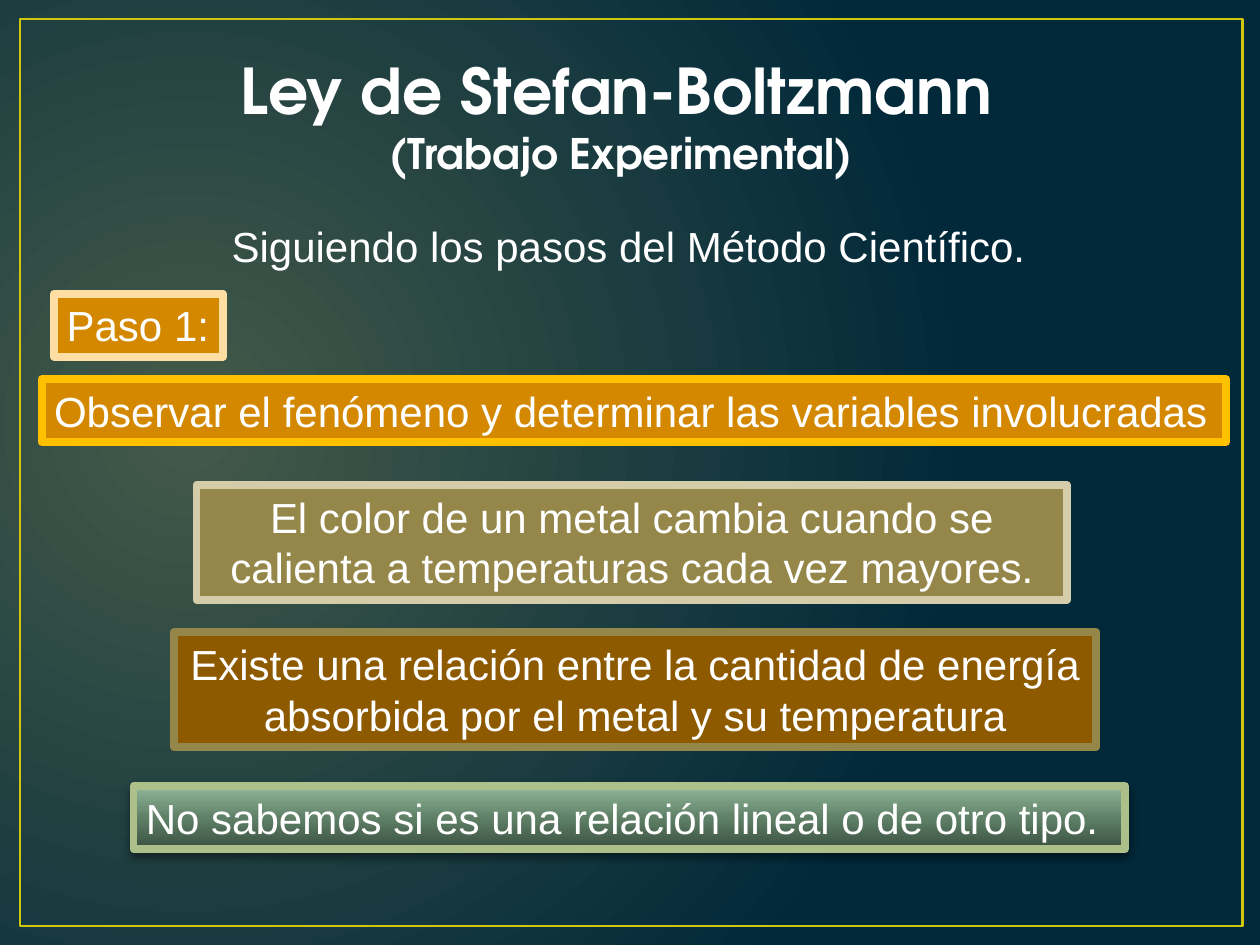
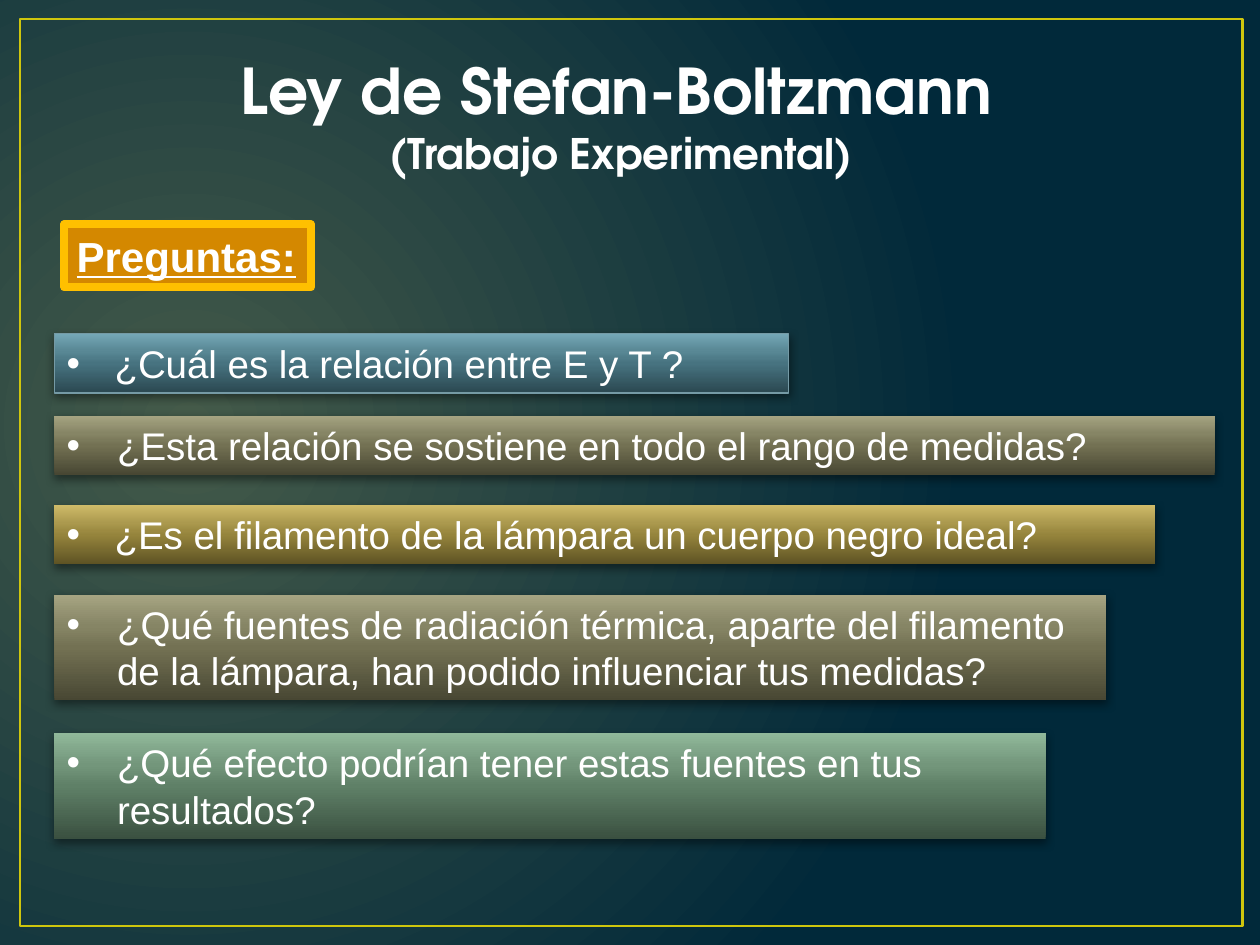
from pptx import Presentation
from pptx.dml.color import RGBColor
from pptx.enum.shapes import MSO_SHAPE
from pptx.enum.text import MSO_ANCHOR, MSO_AUTO_SIZE, PP_ALIGN
from pptx.oxml import parse_xml
from pptx.oxml.ns import nsdecls, qn
from pptx.util import Pt

RECT = MSO_SHAPE.RECTANGLE
TOP = MSO_ANCHOR.TOP
GROW = MSO_AUTO_SIZE.SHAPE_TO_FIT_TEXT
LEFT, MID = PP_ALIGN.LEFT, PP_ALIGN.CENTER

# Shared look
HEAD, BODY = "TeX Gyre Adventor", "Arial"
WHITE, BLACK = "FFFFFF", "000000"
FRAME, AMBER, GOLD = "CFC60D", "D48800", "FFC000"
CREAM, KHAKI, SAND, BROWN, LIME = "FFDEA4", "958749", "D5CDA9", "8E5A00", "AEC089"
STEEL = "759AA5"
BACK = [(0, "445A49"), (100, "01293A")]
STEPS = (0, 50, 70, 100)
GREEN = list(zip(STEPS, ("3A5040", "5F8067", "73967B", "90B89A")))
BLUE = list(zip(STEPS, ("2B4851", "477380", "588794", "74A7B6")))
OLIVE = list(zip(STEPS, ("484733", "737153", "868565", "A6A482")))
OCHRE = list(zip(STEPS, ("5E5324", "95843C", "AB994E", "CFBB69")))
UPWARD = '<a:lin ang="16200000" scaled="0"/>'
GLOW = ('<a:path path="circle"><a:fillToRect l="15000" t="50000" '
        'r="85000" b="60000"/></a:path>')
MARGIN = 31
ROW, TALL = 33.8, 60.5


def tint(code):
    return RGBColor.from_string(code)


def blend(fill, root, stops, course):
    """Swap the first fill under root for a gradient."""
    fill.background()
    marks = "".join(f'<a:gs pos="{pos * 1000}"><a:srgbClr val="{code}"/></a:gs>'
                    for pos, code in stops)
    old = root.find(".//" + qn("a:noFill"))
    old.getparent().replace(old, parse_xml(
        f'<a:gradFill {nsdecls("a")} rotWithShape="1"><a:gsLst>{marks}</a:gsLst>'
        f'{course}</a:gradFill>'))


def shade(shape):
    """Soft shadow just below the shape."""
    shape.element.spPr.find(qn("a:effectLst")).append(parse_xml(
        f'<a:outerShdw {nsdecls("a")} blurRad="{Pt(5)}" dist="{Pt(2)}" '
        f'dir="5400000" rotWithShape="0"><a:srgbClr val="{BLACK}">'
        '<a:alpha val="43000"/></a:srgbClr></a:outerShdw>'))


def style(para, size, align=LEFT, face=BODY, bold=False, under=False):
    para.alignment = align
    for run in para.runs:
        font = run.font
        font.name, font.size = face, Pt(size)
        font.bold, font.underline = bold, under
        font.color.rgb = tint(WHITE)


def write(shape, text, size=24, wrap=True, **look):
    frame = shape.text_frame
    frame.text = text
    frame.word_wrap = wrap
    frame.auto_size = GROW
    frame.vertical_anchor = TOP
    for para in frame.paragraphs:
        style(para, size, **look)


def block(slide, spot, fill=None, line=None, width=4.5):
    """Rectangle; a list of stops as fill gives a shaded gradient."""
    shape = slide.shapes.add_shape(RECT, *map(Pt, spot))
    shape.shadow.inherit = False
    if isinstance(fill, list):
        blend(shape.fill, shape.element, fill, UPWARD)
        shade(shape)
    elif fill:
        shape.fill.solid()
        shape.fill.fore_color.rgb = tint(fill)
    else:
        shape.fill.background()
    if line:
        shape.line.color.rgb = tint(line)
        shape.line.width = Pt(width)
    else:
        shape.line.fill.background()
    return shape


def bullet(shape, indent):
    props = shape.text_frame.paragraphs[0]._p.get_or_add_pPr()
    props.set("marL", str(Pt(indent)))
    props.set("indent", str(-Pt(indent)))
    props.append(parse_xml(f'<a:buFont {nsdecls("a")} typeface="{BODY}"/>'))
    props.append(parse_xml(f'<a:buChar {nsdecls("a")} char="•"/>'))


def dress(layout, slide):
    """Give the layout its background and frame."""
    blend(layout.background.fill, layout.element, BACK, GLOW)
    frame = block(slide, (11.5, 10.8, 698.4, 518.4), line=FRAME, width=1.5)
    frame.element.nvSpPr.cNvPr.set("id", "20")
    layout.element.cSld.spTree.append(frame.element)


def head(slide):
    title = slide.shapes.title
    title.left, title.top, title.width, title.height = map(
        Pt, (130.3, 25.9, 449.3, 79.9))
    write(title, "Ley de Stefan-Boltzmann\n(Trabajo Experimental)", 36,
          wrap=False, face=HEAD, bold=True)
    style(title.text_frame.paragraphs[1], 24, MID, HEAD, True)


def method(slide):
    head(slide)
    intro = slide.shapes.add_textbox(*map(Pt, (125.3, 122.4, 473, 36)))
    write(intro, "Siguiendo los pasos del Método Científico.", wrap=False)
    step = block(slide, (MARGIN, 167.8, 96.5, 36), AMBER, CREAM)
    write(step, "Paso 1:", wrap=False)

    # Task and findings
    notes = [
        ((23.8, 216.7, 676.8, 36), AMBER, GOLD, LEFT,
         "Observar el fenómeno y determinar las variables involucradas"),
        ((112.3, 277.2, 497.5, 65.5), KHAKI, SAND, MID,
         "El color de un metal cambia cuando se calienta a temperaturas "
         "cada vez mayores."),
        ((99.4, 361.4, 527, 65.5), BROWN, KHAKI, MID,
         "Existe una relación entre la cantidad de energía absorbida por "
         "el metal y su temperatura"),
        ((76.3, 449.3, 566.6, 36), GREEN, LIME, LEFT,
         "No sabemos si es una relación lineal o de otro tipo."),
    ]
    for spot, fill, line, align, text in notes:
        write(block(slide, spot, fill, line), text, align=align)


def quiz(slide):
    head(slide)
    label = block(slide, (36.7, 128.2, 141.1, 36), AMBER, GOLD)
    write(label, "Preguntas:", wrap=False, bold=True, under=True)

    # Questions: top, width, height, fill, line, indent, text
    asks = [
        (190.8, 419.8, ROW, BLUE, STEEL, 27.4,
         "¿Cuál es la relación entre E y T ?"),
        (237.6, 663.1, ROW, OLIVE, None, 28.8,
         "¿Esta relación se sostiene en todo el rango de medidas?"),
        (288.7, 629.3, ROW, OCHRE, None, 27.4,
         "¿Es el filamento de la lámpara un cuerpo negro ideal?"),
        (339.8, 601.2, TALL, OLIVE, None, 28.8,
         "¿Qué fuentes de radiación térmica, aparte del filamento de la "
         "lámpara, han podido influenciar tus medidas?"),
        (419, 566.6, TALL, GREEN, None, 28.8,
         "¿Qué efecto podrían tener estas fuentes en tus resultados?"),
    ]
    for top, width, height, fill, line, indent, text in asks:
        bar = block(slide, (MARGIN, top, width, height), fill, line, 0.75)
        write(bar, text, 22)
        bullet(bar, indent)


def main():
    deck = Presentation()
    deck.slide_width, deck.slide_height = Pt(720), Pt(540)
    layout = deck.slide_layouts[5]
    first = deck.slides.add_slide(layout)
    dress(layout, first)
    method(first)
    quiz(deck.slides.add_slide(layout))
    deck.save("out.pptx")


if __name__ == "__main__":
    main()
